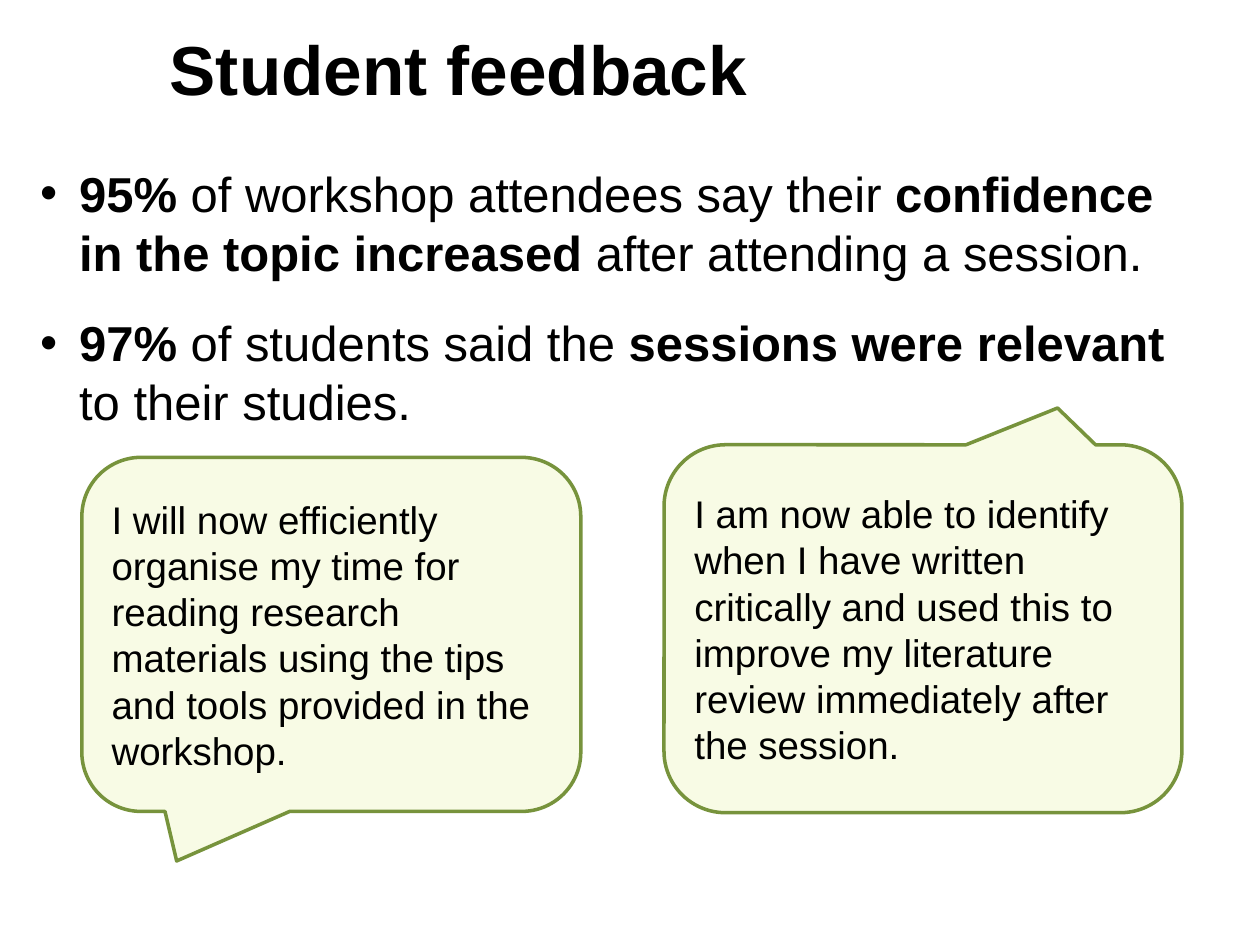
from dataclasses import dataclass

from pptx import Presentation
from pptx.dml.color import RGBColor
from pptx.enum import shapes, text
from pptx.oxml import ns, xmlchemy
from pptx.util import Inches, Pt

COLORS = {"text": "000000", "bubble": "C0D800", "outline": "77933C"}
FONT = "Arial"


@dataclass
class Finding:
    phrases: list[tuple[str, bool]]
    space_after: float = 0


@dataclass
class Quote:
    box: tuple[float, float, float, float]
    tail: tuple[float, float]
    words: str


FINDINGS = [
    Finding(
        [
            ("95% ", True),
            ("of workshop attendees say their", False),
            (" confidence in the topic increased", True),
            (" after attending a session.", False),
        ],
        space_after=18,
    ),
    Finding(
        [
            ("97% ", True),
            ("of students said the ", False),
            ("sessions were relevant", True),
            (" to their studies.", False),
        ]
    ),
]

QUOTES = [
    Quote(
        (0.65, 3.63, 3.96, 2.81),
        (-0.31, 0.64),
        "I will now efficiently organise my time for reading research materials "
        "using the tips and tools provided in the workshop.",
    ),
    Quote(
        (5.27, 3.53, 4.11, 2.92),
        (0.26, -0.6),
        "I am now able to identify when I have written critically and used this "
        "to improve my literature review immediately after the session.",
    ),
]


def color(name: str) -> RGBColor:
    return RGBColor.from_string(COLORS[name])


def style(paragraph, size: float) -> None:
    paragraph.font.name = FONT
    paragraph.font.size = Pt(size)
    paragraph.font.color.rgb = color("text")


def add_bullet(paragraph, indent: float) -> None:
    properties = paragraph._p.get_or_add_pPr()
    properties.set("marL", str(Inches(indent)))
    properties.set("indent", str(Inches(-indent)))
    bullet_font = xmlchemy.OxmlElement("a:buFont")
    bullet_font.set("typeface", FONT)
    bullet = xmlchemy.OxmlElement("a:buChar")
    bullet.set("char", "•")
    first_default = properties.find(ns.qn("a:defRPr"))
    for element in (bullet_font, bullet):
        if first_default is None:
            properties.append(element)
        else:
            first_default.addprevious(element)


def set_title(slide, words: str) -> None:
    title = slide.shapes.title
    title.left, title.top = Inches(0.23), Inches(0.18)
    title.width, title.height = Inches(6.82), Inches(0.72)
    frame = title.text_frame
    frame.text = words
    frame.auto_size = text.MSO_AUTO_SIZE.NONE
    frame.vertical_anchor = text.MSO_ANCHOR.MIDDLE
    heading = frame.paragraphs[0]
    heading.alignment = text.PP_ALIGN.CENTER
    style(heading, 39.6)
    heading.font.bold = True


def add_findings(slide, findings: list[Finding]) -> None:
    box = slide.shapes.add_textbox(Inches(0.22), Inches(1.25), Inches(9.42), Inches(2.24))
    frame = box.text_frame
    frame.word_wrap = True
    frame.auto_size = text.MSO_AUTO_SIZE.SHAPE_TO_FIT_TEXT
    for index, finding in enumerate(findings):
        paragraph = frame.add_paragraph() if index else frame.paragraphs[0]
        style(paragraph, 28)
        paragraph.space_after = Pt(finding.space_after)
        add_bullet(paragraph, 0.31)
        for words, bold in finding.phrases:
            run = paragraph.add_run()
            run.text = words
            run.font.bold = bold


def add_quote(slide, quote: Quote) -> None:
    bubble = slide.shapes.add_shape(
        shapes.MSO_SHAPE.ROUNDED_RECTANGULAR_CALLOUT, *map(Inches, quote.box)
    )
    bubble.shadow.inherit = False
    for index, value in enumerate((*quote.tail, 0.167)):
        bubble.adjustments[index] = value
    bubble.fill.solid()
    bubble.fill.fore_color.rgb = color("bubble")
    alpha = xmlchemy.OxmlElement("a:alpha")
    alpha.set("val", "10000")
    bubble._element.spPr.find(f"{ns.qn('a:solidFill')}/{ns.qn('a:srgbClr')}").append(alpha)
    bubble.line.color.rgb = color("outline")
    bubble.line.width = Pt(2)
    frame = bubble.text_frame
    frame.word_wrap = True
    frame.vertical_anchor = text.MSO_ANCHOR.MIDDLE
    frame.text = quote.words
    paragraph = frame.paragraphs[0]
    paragraph.alignment = text.PP_ALIGN.LEFT
    style(paragraph, 22)


def main() -> None:
    deck = Presentation()
    deck.slide_width, deck.slide_height = Inches(10), Inches(7.5)
    slide = deck.slides.add_slide(deck.slide_layouts.get_by_name("Title Only"))
    set_title(slide, "Student feedback")
    add_findings(slide, FINDINGS)
    for quote in QUOTES:
        add_quote(slide, quote)
    deck.save("out.pptx")


if __name__ == "__main__":
    main()
